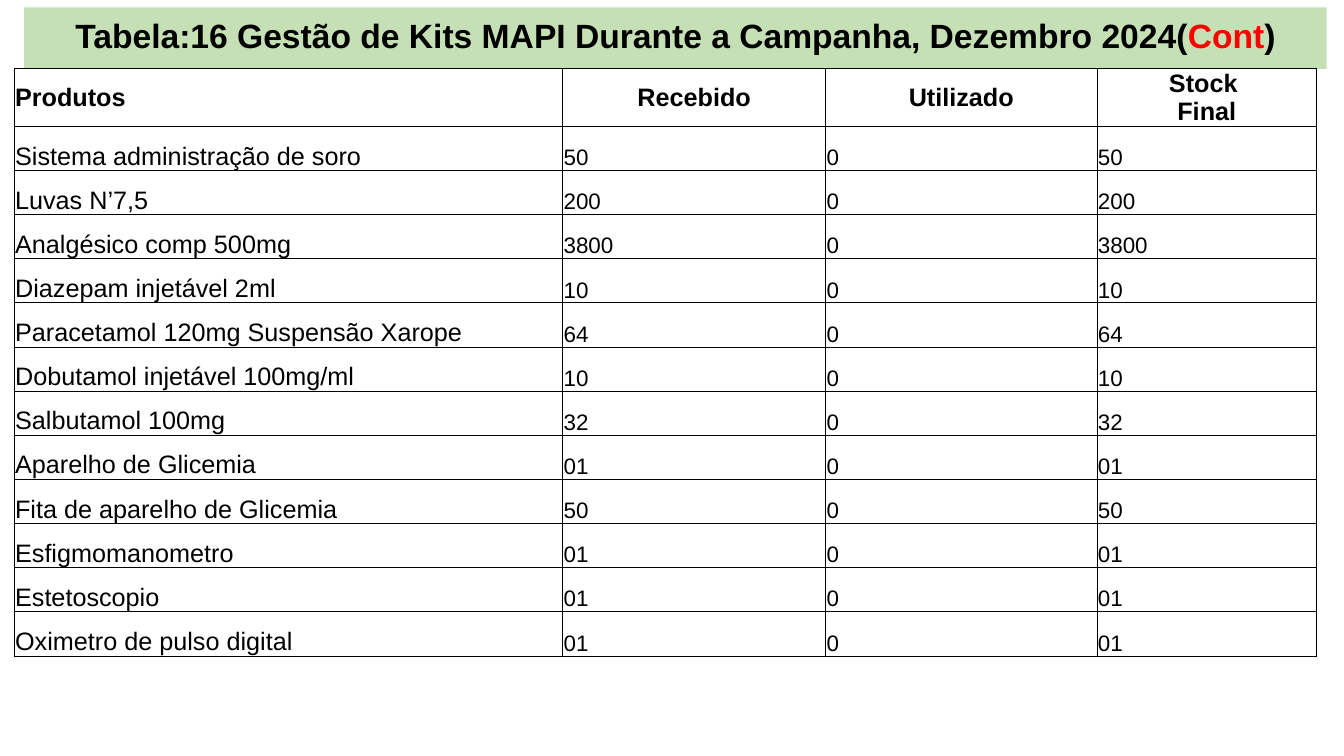
import pptx
import pptx.dml.color
import pptx.enum.text
import pptx.oxml
import pptx.oxml.ns
import pptx.util

RGBColor = pptx.dml.color.RGBColor
BLACK = RGBColor(0x00, 0x00, 0x00)
RED = RGBColor(0xFF, 0x00, 0x00)
WHITE = RGBColor(0xFF, 0xFF, 0xFF)
GREEN = RGBColor(0xC5, 0xE0, 0xB4)

CENTER = pptx.enum.text.PP_ALIGN.CENTER
LEFT = pptx.enum.text.PP_ALIGN.LEFT
MIDDLE = pptx.enum.text.MSO_ANCHOR.MIDDLE
BOTTOM = pptx.enum.text.MSO_ANCHOR.BOTTOM

HEADER = ["Produtos", "Recebido", "Utilizado", "Stock \nFinal"]
PRODUCTS = [
    ("Sistema administração de soro", "50"),
    ("Luvas N’7,5", "200"),
    ("Analgésico comp 500mg", "3800"),
    ("Diazepam injetável 2ml", "10"),
    ("Paracetamol 120mg Suspensão Xarope", "64"),
    ("Dobutamol injetável 100mg/ml", "10"),
    ("Salbutamol 100mg", "32"),
    ("Aparelho de Glicemia", "01"),
    ("Fita de aparelho de Glicemia", "50"),
    ("Esfigmomanometro", "01"),
    ("Estetoscopio", "01"),
    ("Oximetro de pulso digital", "01"),
]


class Deck:
    """Style and current slide, laid out on a grid of 100 columns by 100 rows."""

    font = "Arial"

    def __init__(self):
        self.prs = pptx.Presentation()
        self.prs.slide_width = pptx.util.Inches(13.33)
        self.prs.slide_height = pptx.util.Inches(7.5)
        self.s = self.prs.slides.add_slide(self.prs.slide_layouts[5])

    def x(self, cols):
        return round(self.prs.slide_width * cols / 100)

    def y(self, rows):
        return round(self.prs.slide_height * rows / 100)

    def box(self, left, top, width, height):
        return self.x(left), self.y(top), self.x(width), self.y(height)

    def run(self, p, text, size, bold=False, color=BLACK):
        r = p.add_run()
        r.text = text
        r.font.name = self.font
        r.font.size = pptx.util.Pt(size)
        r.font.bold = bold
        r.font.color.rgb = color

    def title(self, parts, *grid):
        sp = self.s.shapes.title
        sp.left, sp.top, sp.width, sp.height = self.box(*grid)
        sp.fill.solid()
        sp.fill.fore_color.rgb = GREEN
        tf = sp.text_frame
        tf.word_wrap = True
        tf.auto_size = pptx.enum.text.MSO_AUTO_SIZE.NONE
        tf.vertical_anchor = MIDDLE
        p = tf.paragraphs[0]
        p.alignment = CENTER
        p.line_spacing = 0.9
        for text, color in parts:
            self.run(p, text, 24, True, color)

    def border(self, cell):
        pr = cell._tc.get_or_add_tcPr()
        ns = pptx.oxml.ns.nsdecls("a")
        for i, side in enumerate(("lnL", "lnR", "lnT", "lnB")):
            pr.insert(i, pptx.oxml.parse_xml(
                f'<a:{side} {ns} w="6350"><a:solidFill><a:srgbClr val="{BLACK}"/>'
                f'</a:solidFill></a:{side}>'))

    def cell(self, cell, text, size, bold, align, anchor):
        cell.fill.solid()
        cell.fill.fore_color.rgb = WHITE
        cell.margin_left = cell.margin_right = cell.margin_top = pptx.util.Inches(0.01)
        cell.margin_bottom = 0
        cell.vertical_anchor = anchor
        tf = cell.text_frame
        for i, line in enumerate(text.split("\n")):
            p = tf.add_paragraph() if i else tf.paragraphs[0]
            p.alignment = align
            self.run(p, line, size, bold)
        self.border(cell)

    def table(self, rows, left, top, widths, head, body):
        heights = [head] + [body] * (len(rows) - 1)
        grid = self.box(left, top, sum(widths), sum(heights))
        tbl = self.s.shapes.add_table(len(rows), len(widths), *grid).table
        for col, width in zip(tbl.columns, widths):
            col.width = self.x(width)
        for row, height in zip(tbl.rows, heights):
            row.height = self.y(height)
        for i, row in enumerate(rows):
            for j, text in enumerate(row):
                size = 16 if i and j else 18
                align = CENTER if j and not i else LEFT
                self.cell(tbl.cell(i, j), text, size, not i, align, BOTTOM if i else MIDDLE)


def main():
    deck = Deck()
    deck.title([
        ("Tabela:16 Gestão de Kits MAPI Durante a Campanha, Dezembro 2024(", BLACK),
        ("Cont", RED),
        (")", BLACK),
    ], 1.8, 0.97, 96.92, 8.13)
    rows = [HEADER] + [[name, stock, "0", stock] for name, stock in PRODUCTS]
    deck.table(rows, 1.05, 9.1, [40.81, 19.58, 20.18, 16.35], 7.6, 5.84)
    deck.prs.save("out.pptx")


if __name__ == "__main__":
    main()
